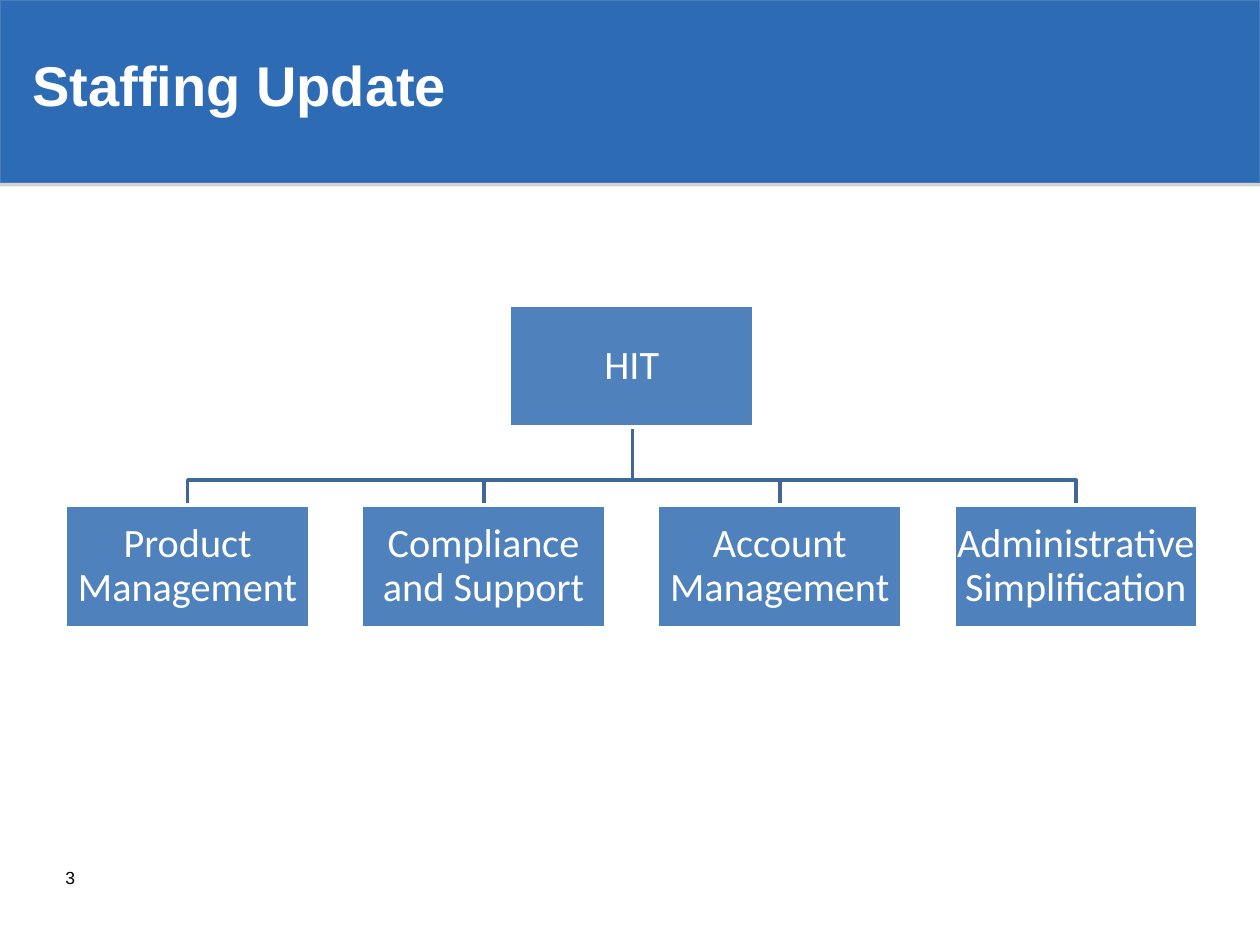
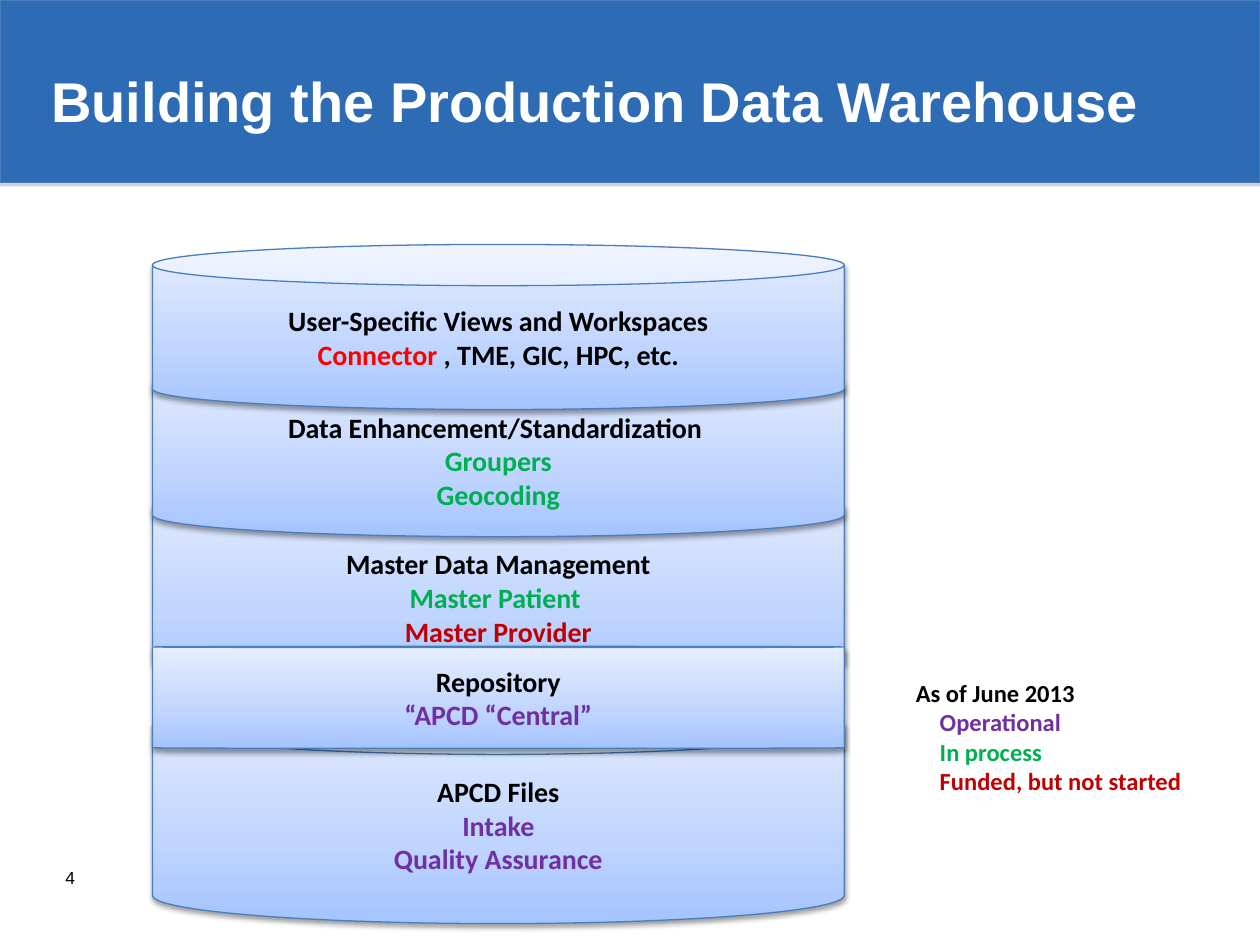
from copy import deepcopy
from dataclasses import dataclass
from lxml import etree
from pptx import Presentation
from pptx import util as u
from pptx.dml.color import RGBColor
from pptx.enum import shapes, text
from pptx.oxml.ns import qn

PX = u.Inches(1) // 100  # 100 px to the inch


@dataclass(frozen=True)
class Theme:
    heading_font: str = "Arial"
    body_font: str = "Calibri"
    title_size: int = 32
    chart_size: int = 23
    layer_size: int = 16
    legend_size: int = 14
    number_size: int = 10
    white: str = "FFFFFF"
    black: str = "000000"
    band: str = "2D6BB5"
    band_line: str = "4A7EBB"
    box: str = "4F81BD"
    branch: str = "3F6797"
    layer_line: str = "4B7EBC"
    layer_stops: tuple = ((0, "A4C4FF"), (0.35, "BFD4FF"), (1, "E6EEFF"))
    operational: str = "7030A0"
    in_process: str = "00B050"
    not_started: str = "C00000"
    alert: str = "FF0000"
    # colour, opacity %, blur pt, distance pt
    band_shadow: tuple = ("808080", 35, 0, 1.8)
    layer_shadow: tuple = ("000000", 38, 3.1, 1.6)


THEME = Theme()

# ---- Content ----
STAFFING = {"title": "Staffing Update", "title_at": (16, 0, 898, 134), "number": "3"}
WAREHOUSE = {"title": "Building the Production Data Warehouse",
             "title_at": (31, 17, 900, 125), "number": "4"}

HEAD = "HIT"
TEAMS = ["Product Management", "Compliance\nand Support",
         "Account Management", "Administrative Simplification"]

# Layers from back to front: top, height, rim adjustment, lines of (words, colour) runs
LAYERS = [
    (554, 179, None, [[("APCD Files", THEME.black)],
                      [("Intake", THEME.operational)],
                      [("Quality Assurance", THEME.operational)]]),
    (383, 162, None, [[("Master Data Management", THEME.black)],
                      [("Master Patient ", THEME.in_process)],
                      [("Master Provider", THEME.not_started)]]),
    (288, 138, None, [[("Data Enhancement/Standardization ", THEME.black)],
                      [("Groupers", THEME.in_process)],
                      [("Geocoding", THEME.in_process)]]),
    (194, 131, None, [[("User-Specific Views and Workspaces", THEME.black)],
                      [("Connector ", THEME.alert),
                       (", TME, GIC, HPC, etc.", THEME.black)]]),
    (513, 81, 0.012, [[("Repository", THEME.black)],
                      [("“APCD “Central”", THEME.operational)]]),
]
LEGEND_HEADING = "As of June 2013"
LEGEND = [("Operational", THEME.operational), ("In process", THEME.in_process),
          ("Funded, but not started", THEME.not_started)]

# ---- Places, in px ----
SLIDE_SIZE = (1000, 750)
BAND_HEIGHT = 145
NUMBER_AT = (42, 683, 233, 40)
BOX_WIDTH, BOX_HEIGHT, BOX_INSET = 194, 97, 2
HEAD_TOP, BUS_TOP, TEAM_TOP = 242, 381, 401
TEAM_LEFT, TEAM_PITCH = 52, 235
LAYER_LEFT, LAYER_WIDTH = 121, 549
LEGEND_AT = (717, 533, 232, 104)
LEGEND_MARGIN, LEGEND_INDENT = 26, -7


def px(*lengths):
    return [round(length * PX) for length in lengths]


def colour(value):
    return RGBColor.from_string(value)


def add_run(paragraph, words, size, value, font=THEME.body_font, bold=False):
    run = paragraph.add_run()
    run.text = words
    run.font.name, run.font.size, run.font.bold = font, u.Pt(size), bold
    run.font.color.rgb = colour(value)


def add_lines(paragraph, lines, size, bold=False):
    """Put lines of (words, colour) runs in one paragraph, with line breaks."""
    for index, line in enumerate(lines):
        if index:
            paragraph.add_line_break()
        for words, value in line:
            add_run(paragraph, words, size, value, bold=bold)


def add_text_box(slide, at, anchor=text.MSO_ANCHOR.TOP):
    frame = slide.shapes.add_textbox(*px(*at)).text_frame
    frame.word_wrap = True
    frame.vertical_anchor = anchor
    return frame


def add_shape(slide, kind, at, line, width):
    """Add a preset shape with a plain outline, no shadow and centred text."""
    shape = slide.shapes.add_shape(kind, *px(*at))
    shape.shadow.inherit = False
    shape.line.color.rgb = colour(line)
    shape.line.width = u.Pt(width)
    frame = shape.text_frame
    frame.word_wrap = True
    frame.vertical_anchor = text.MSO_ANCHOR.MIDDLE
    frame.paragraphs[0].alignment = text.PP_ALIGN.CENTER
    return shape


def fill_solid(shape, value):
    shape.fill.solid()
    shape.fill.fore_color.rgb = colour(value)


def fill_gradient(shape, stops):
    """Fill from bottom to top with (position, colour) stops."""
    shape.fill.gradient()
    shape.fill.gradient_angle = 90
    stop_list = next(shape._element.spPr.iter(qn("a:gsLst")))
    while len(stop_list) < len(stops):
        stop_list.append(deepcopy(stop_list[0]))
    for stop, (position, value) in zip(shape.fill.gradient_stops, stops):
        stop.position = position
        stop.color.rgb = colour(value)


def drop_shadow(shape, value, opacity, blur, distance):
    effects = shape._element.spPr.find(qn("a:effectLst"))
    shadow = etree.SubElement(effects, qn("a:outerShdw"), blurRad=str(u.Pt(blur)),
                              dist=str(u.Pt(distance)), dir="5400000", rotWithShape="0")
    tint = etree.SubElement(shadow, qn("a:srgbClr"), val=value)
    etree.SubElement(tint, qn("a:alpha"), val=str(opacity * 1000))


def add_slide(presentation, page):
    """Add a blank slide with the shared band, title and slide number."""
    slide = presentation.slides.add_slide(presentation.slide_layouts[6])
    band = add_shape(slide, shapes.MSO_SHAPE.RECTANGLE,
                     (0, 0, SLIDE_SIZE[0], BAND_HEIGHT), THEME.band_line, 0.75)
    fill_solid(band, THEME.band)
    drop_shadow(band, *THEME.band_shadow)
    title = add_text_box(slide, page["title_at"], text.MSO_ANCHOR.MIDDLE)
    add_run(title.paragraphs[0], page["title"], THEME.title_size, THEME.white,
            THEME.heading_font, bold=True)
    number = add_text_box(slide, NUMBER_AT)
    add_run(number.paragraphs[0], page["number"], THEME.number_size, THEME.black,
            THEME.heading_font)
    return slide


def add_branch(slide, start, end):
    """Draw the bent line from the head box down to one team box."""
    (x1, y1), (x2, y2) = start, end
    builder = slide.shapes.build_freeform(x1, y1, scale=PX)
    builder.add_line_segments([(x1, BUS_TOP), (x2, BUS_TOP), (x2, y2)], close=False)
    branch = builder.convert_to_shape()
    branch.shadow.inherit = False
    branch.fill.background()
    branch.line.color.rgb = colour(THEME.branch)
    branch.line.width = u.Pt(2)


def add_box(slide, label, left, top):
    box = add_shape(slide, shapes.MSO_SHAPE.RECTANGLE,
                    (left, top, BOX_WIDTH, BOX_HEIGHT), THEME.white, 2)
    fill_solid(box, THEME.box)
    frame = box.text_frame
    frame.margin_left = frame.margin_right = BOX_INSET * PX
    frame.margin_top = frame.margin_bottom = BOX_INSET * PX
    paragraph = frame.paragraphs[0]
    paragraph.line_spacing = 0.9
    lines = [[(line, THEME.white)] for line in label.split("\n")]
    add_lines(paragraph, lines, THEME.chart_size)


def add_staffing_chart(slide):
    lefts = [TEAM_LEFT + index * TEAM_PITCH for index in range(len(TEAMS))]
    head_left = (lefts[0] + lefts[-1]) / 2
    half = BOX_WIDTH / 2
    for left in reversed(lefts):
        add_branch(slide, (head_left + half, HEAD_TOP + BOX_HEIGHT), (left + half, TEAM_TOP))
    add_box(slide, HEAD, head_left, HEAD_TOP)
    for team, left in zip(TEAMS, lefts):
        add_box(slide, team, left, TEAM_TOP)


def add_layer(slide, top, height, rim, lines):
    layer = add_shape(slide, shapes.MSO_SHAPE.CAN,
                      (LAYER_LEFT, top, LAYER_WIDTH, height), THEME.layer_line, 0.75)
    if rim is not None:
        layer.adjustments[0] = rim
    fill_gradient(layer, THEME.layer_stops)
    drop_shadow(layer, *THEME.layer_shadow)
    add_lines(layer.text_frame.paragraphs[0], lines, THEME.layer_size, bold=True)


def add_legend(slide):
    frame = add_text_box(slide, LEGEND_AT)
    frame.word_wrap = False
    frame.auto_size = text.MSO_AUTO_SIZE.SHAPE_TO_FIT_TEXT
    add_run(frame.paragraphs[0], LEGEND_HEADING, THEME.legend_size, THEME.black, bold=True)
    for status, value in LEGEND:
        paragraph = frame.add_paragraph()
        paragraph.level = 1
        properties = paragraph._p.get_or_add_pPr()
        properties.set("marL", str(LEGEND_MARGIN * PX))
        properties.set("indent", str(LEGEND_INDENT * PX))
        add_run(paragraph, status, THEME.legend_size, value, bold=True)


def main():
    presentation = Presentation()
    presentation.slide_width, presentation.slide_height = px(*SLIDE_SIZE)
    add_staffing_chart(add_slide(presentation, STAFFING))
    warehouse = add_slide(presentation, WAREHOUSE)
    for layer in LAYERS:
        add_layer(warehouse, *layer)
    add_legend(warehouse)
    presentation.save("out.pptx")


if __name__ == "__main__":
    main()
